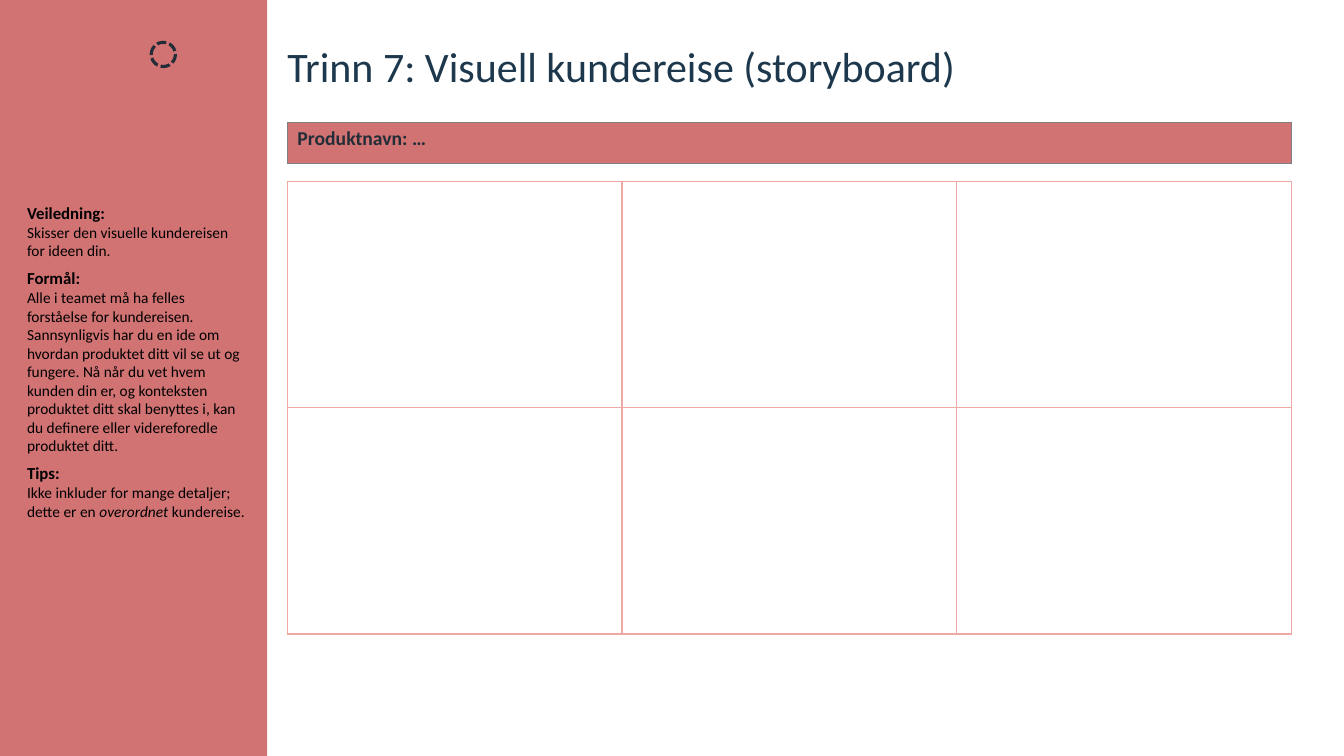
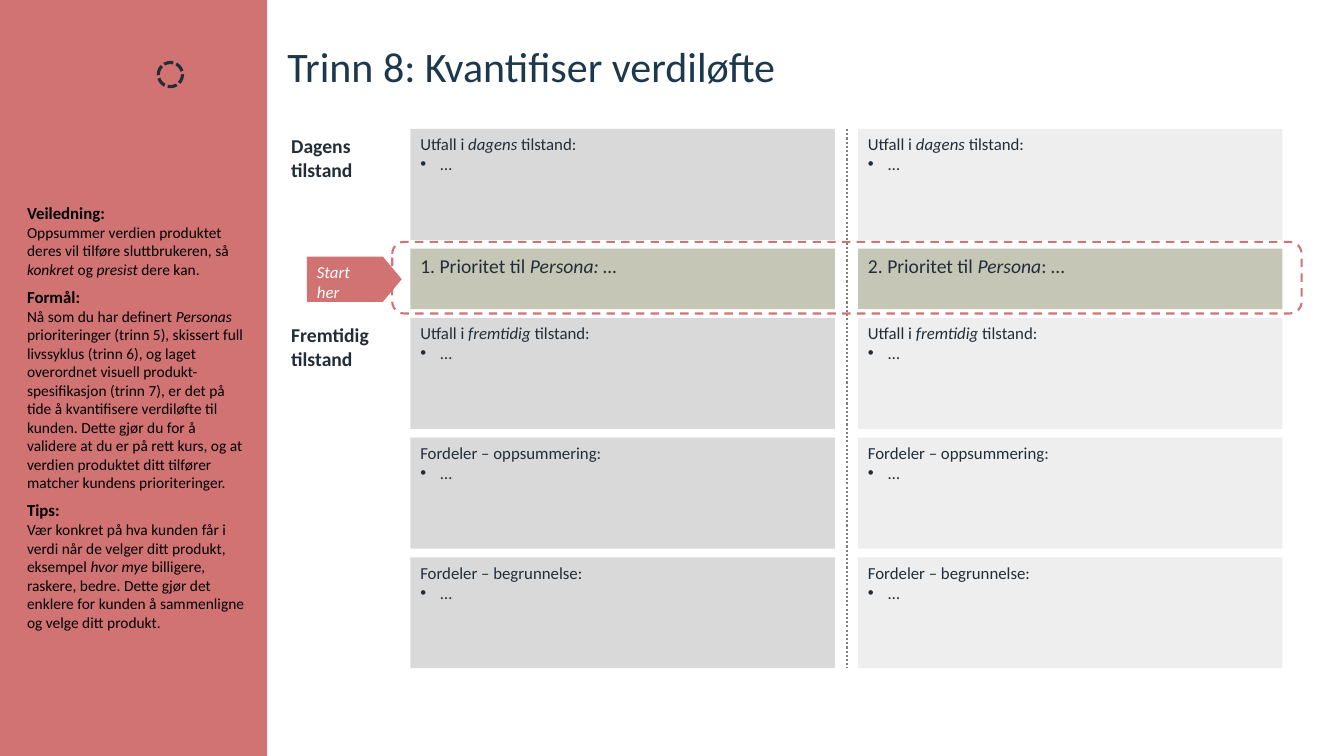
import pptx
import pptx.dml.color
import pptx.enum.dml
import pptx.enum.shapes
import pptx.enum.text
import pptx.oxml
import pptx.oxml.ns
import pptx.util
from lxml import etree

Inches = pptx.util.Inches
Pt = pptx.util.Pt
FORM = pptx.enum.shapes.MSO_SHAPE
DASH = pptx.enum.dml.MSO_LINE
TEXT = pptx.enum.text

# Shared style
FONT = "Calibri"
ROSE, PINK, SAGE = "D17273", "EDAAA5", "C6C6B6"
INK, NAVY, BLACK, WHITE = "232D37", "1D384C", "000000", "FFFFFF"
GREY, SILVER, PALE = "808080", "D9D9D9", "EEEEEE"


def color(code):
    return pptx.dml.color.RGBColor.from_string(code)


def inches(*sizes):
    return [Inches(size) for size in sizes]


def child(node, tag, **attrs):
    return etree.SubElement(node, pptx.oxml.ns.qn(tag), attrs)


class Deck:
    def __init__(self):
        self.file = pptx.Presentation()
        self.file.slide_width, self.file.slide_height = inches(13.33, 7.5)
        self.slide = None

    def page(self, title, guide, ring):
        """Start a slide with its title, side band, guide text and ring."""
        self.slide = self.file.slides.add_slide(self.file.slide_layouts[5])
        head = self.slide.shapes.title
        head.left, head.top, head.width, head.height = inches(2.85, 0.46, 9.44, 0.64)
        frame = self.setup(head.text_frame, 0)
        self.put(frame.paragraphs[0], title, 30, NAVY)
        frame.paragraphs[0].line_spacing = 0.9

        self.shape(FORM.RECTANGLE, (0, 0, 2.65, 7.5), ROSE)
        self.guide(guide)
        self.shape(FORM.OVAL, (*ring, 0.24, 0.24), None, (INK, 2.25, DASH.SQUARE_DOT))

    def setup(self, frame, inset=None):
        frame.word_wrap = True
        frame.auto_size = TEXT.MSO_AUTO_SIZE.NONE
        frame.vertical_anchor = TEXT.MSO_ANCHOR.TOP
        if inset is not None:
            frame.margin_left = frame.margin_right = Inches(inset)
            frame.margin_top = frame.margin_bottom = Inches(inset)
        return frame

    def put(self, para, text, size, ink=INK, bold=False):
        """Add runs; parts between asterisks are italic."""
        para.alignment = TEXT.PP_ALIGN.LEFT
        for place, part in enumerate(text.split("*")):
            if part:
                run = para.add_run()
                run.text = part
                run.font.name, run.font.size = FONT, Pt(size)
                run.font.bold, run.font.italic = bold, place % 2 == 1
                run.font.color.rgb = color(ink)

    def stroke(self, line, ink, width, dash):
        line.color.rgb = color(ink)
        line.width = Pt(width)
        line.dash_style = dash

    def shape(self, form, area, fill=None, line=None):
        item = self.slide.shapes.add_shape(form, *inches(*area))
        item.shadow.inherit = False
        if fill:
            item.fill.solid()
            item.fill.fore_color.rgb = color(fill)
        else:
            item.fill.background()
        if line:
            self.stroke(item.line, *line)
        else:
            item.line.fill.background()
        return item

    def box(self, area, fill, text, size, bold=False, bullet=None):
        """Filled box with a heading and, if given, one bullet."""
        item = self.shape(FORM.RECTANGLE, area, fill)
        frame = self.setup(item.text_frame)
        self.put(frame.paragraphs[0], text, size, bold=bold)
        if bullet:
            para = frame.add_paragraph()
            props = para._p.get_or_add_pPr()
            props.set("marL", str(Inches(0.2)))
            props.set("indent", str(Inches(-0.2)))
            child(props, "a:buFont", typeface="Arial")
            child(props, "a:buChar", char="•")
            self.put(para, bullet, size)

    def guide(self, parts):
        area = inches(0.17, 1.96, 2.4, 4.39)
        frame = self.setup(self.slide.shapes.add_textbox(*area).text_frame)
        para = frame.paragraphs[0]
        for place, (head, body) in enumerate(parts):
            if place:
                para.space_after = Pt(6)
                para = frame.add_paragraph()
            self.put(para, head, 12, BLACK, True)
            para = frame.add_paragraph()
            self.put(para, body, 11, BLACK)

    def table(self, area, rows, cols, edge, width, fill=None):
        table = self.slide.shapes.add_table(rows, cols, *inches(*area)).table
        table.first_row = table.horz_banding = False
        for cell in table.iter_cells():
            props = cell._tc.get_or_add_tcPr()
            for side in "LRTB":
                line = child(props, "a:ln" + side, w=str(Pt(width)))
                child(child(line, "a:solidFill"), "a:srgbClr", val=edge)
            if fill:
                cell.fill.solid()
                cell.fill.fore_color.rgb = color(fill)
            else:
                cell.fill.background()
        return table

    def line(self, start, end, ink, width, dash):
        kind = pptx.enum.shapes.MSO_CONNECTOR.STRAIGHT
        item = self.slide.shapes.add_connector(kind, *inches(*start, *end))
        self.stroke(item.line, ink, width, dash)
        child(item._element.spPr, "a:effectLst")

    def flag(self, area, text):
        """Pointer turned to the right, with upright text."""
        item = self.shape(FORM.FLOWCHART_OFFPAGE_CONNECTOR, area, ROSE)
        item.rotation = 270
        frame = self.setup(item.text_frame)
        frame._txBody.bodyPr.set("vert", "vert")
        self.put(frame.paragraphs[0], text, 12, WHITE)


def story(deck):
    deck.page("Trinn 7: Visuell kundereise (storyboard)", [
        ("Veiledning:", "Skisser den visuelle kundereisen for ideen din."),
        ("Formål:", "Alle i teamet må ha felles forståelse for kundereisen. "
         "Sannsynligvis har du en ide om hvordan produktet ditt vil se ut og fungere. "
         "Nå når du vet hvem kunden din er, og konteksten produktet ditt skal "
         "benyttes i, kan du definere eller videreforedle produktet ditt."),
        ("Tips:", "Ikke inkluder for mange detaljer; "
         "dette er en *overordnet* kundereise."),
    ], (1.5, 0.42))

    # Product name bar and empty story grid
    name = deck.table((2.85, 1.21, 9.96, 0.41), 1, 1, GREY, 0.5, ROSE)
    para = name.cell(0, 0).text_frame.paragraphs[0]
    deck.put(para, "Produktnavn: …", 14, bold=True)
    deck.table((2.85, 1.8, 9.96, 4.49), 2, 3, PINK, 1)


def value(deck):
    deck.page("Trinn 8: Kvantifiser verdiløfte", [
        ("Veiledning:", "Oppsummer verdien produktet deres vil tilføre "
         "sluttbrukeren, så *konkret *og *presist *dere kan."),
        ("Formål:", "Nå som du har definert *Personas* prioriteringer (trinn 5), "
         "skissert full livssyklus (trinn 6), og laget overordnet visuell "
         "produkt-spesifikasjon (trinn 7), er det på tide å kvantifisere verdiløfte "
         "til kunden. Dette gjør du for å validere at du er på rett kurs, og at "
         "verdien produktet ditt tilfører matcher kundens prioriteringer."),
        ("Tips:", "Vær konkret på hva kunden får i verdi når de velger ditt produkt, "
         "eksempel *hvor mye *billigere, raskere, bedre. Dette gjør det enklere for "
         "kunden å sammenligne og velge ditt produkt."),
    ], (1.57, 0.62))

    # Rows: side label and box heading; None is the priority row
    rows = [
        ("Dagens tilstand", "Utfall i *dagens* tilstand:"),
        (None, None),
        ("Fremtidig tilstand", "Utfall i *fremtidig* tilstand:"),
        (None, "Fordeler – oppsummering:"),
        (None, "Fordeler – begrunnelse:"),
    ]
    cols = [
        (4.07, SILVER, "1. Prioritet til *Persona: …*"),
        (8.51, PALE, "2. Prioritet til *Persona*: …"),
    ]
    first, last, tall, low, wide = 1.28, 6.63, 1.1, 0.6, 4.21
    gap = (last - first - 4 * tall - low) / 4
    top = first
    for label, head in rows:
        high = tall if head else low
        if label:
            deck.box((2.79, top, 1.27, high), WHITE, label, 14, bold=True)
        for left, fill, rank in cols:
            area = (left, top, wide, high)
            if head:
                deck.box(area, fill, head, 12, bullet="…")
            else:
                deck.box(area, SAGE, rank, 14)
        top += high + gap

    # Divider, dashed frame and start flag
    deck.line((8.4, first), (8.4, last), GREY, 1.5, DASH.ROUND_DOT)
    deck.shape(FORM.ROUNDED_RECTANGLE, (3.89, 2.4, 9.02, 0.71), None,
               (ROSE, 1.5, DASH.DASH))
    deck.flag((3.29, 2.3, 0.45, 0.94), "*Start her*")


def main():
    deck = Deck()
    story(deck)
    value(deck)
    deck.file.save("out.pptx")


if __name__ == "__main__":
    main()
